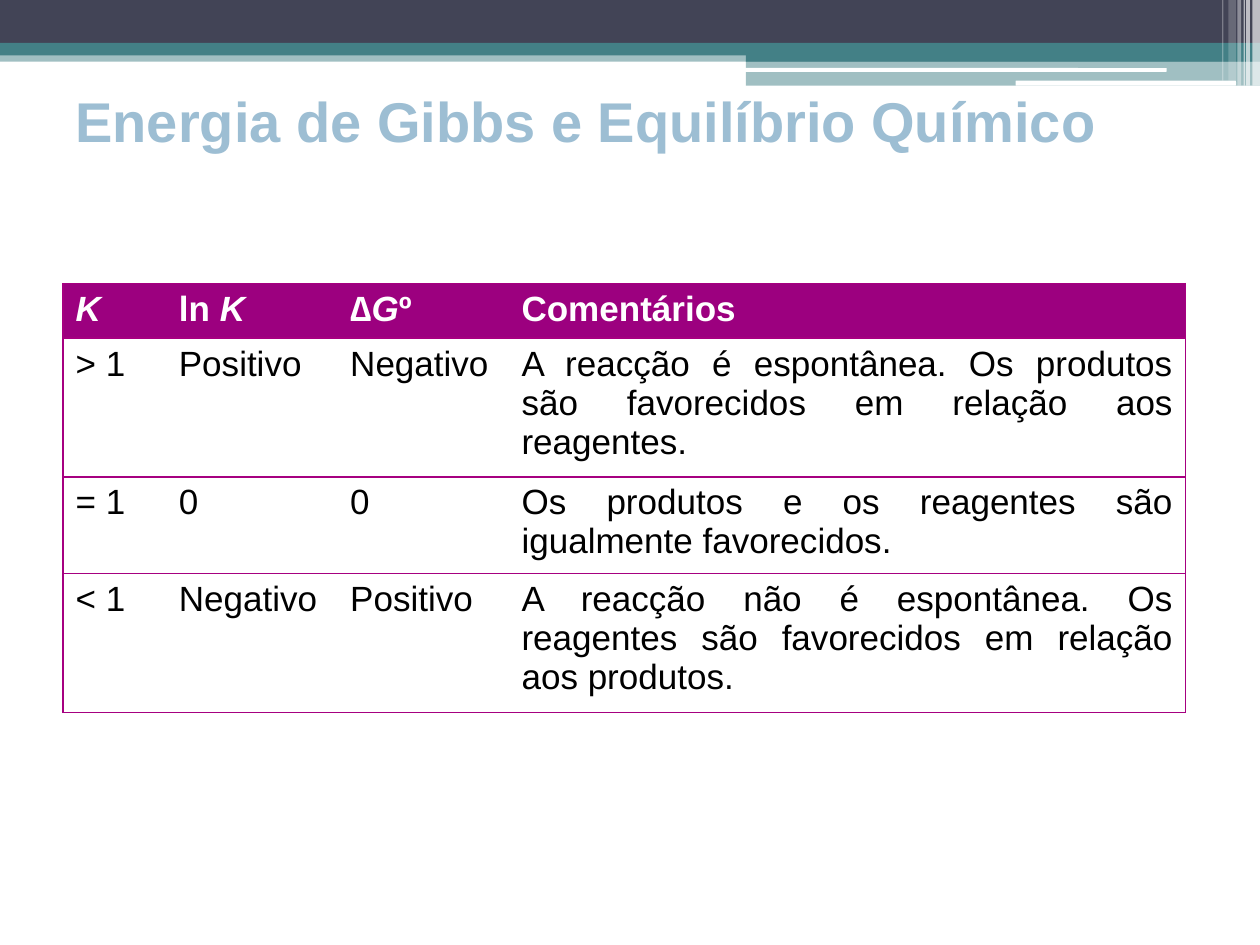
import pptx
import pptx.dml.color
import pptx.enum.shapes
import pptx.enum.text
import pptx.oxml
import pptx.oxml.ns
import pptx.util
from pptx.util import Inches

NAVY, TEAL, WHITE, BLACK = "424456", "438086", "FFFFFF", "000000"
TITLE_BLUE, HEADER_PURPLE, BORDER_PURPLE = "9DBED3", "9C007F", "A60080"
LEFT = pptx.enum.text.PP_ALIGN.LEFT
JUSTIFY = pptx.enum.text.PP_ALIGN.JUSTIFY
RECTANGLE = pptx.enum.shapes.MSO_SHAPE.RECTANGLE
ROUNDED = pptx.enum.shapes.MSO_SHAPE.ROUNDED_RECTANGLE

COLUMN_WIDTHS = (0.82, 1.36, 1.36, 5.37)
ROW_HEIGHTS = (0.41, 1.03, 0.72, 1.03)
# Header cells are lists of (text, italic) runs.
HEADER = (
    [("K", True)],
    [("ln ", False), ("K", True)],
    [("∆", False), ("G", True), ("º", False)],
    [("Comentários", False)],
)
BODY = (
    ("> 1", "Positivo", "Negativo",
     "A reacção é espontânea. Os produtos são favorecidos em relação aos reagentes."),
    ("= 1", "0", "0", "Os produtos e os reagentes são igualmente favorecidos."),
    ("< 1", "Negativo", "Positivo",
     "A reacção não é espontânea. Os reagentes são favorecidos em relação aos produtos."),
)


def rgb(value):
    return pptx.dml.color.RGBColor.from_string(value)


def write_text(frame, runs, size=20, color=BLACK, bold=False, align=LEFT):
    """Fill the frame's first paragraph with a string or (text, italic) runs."""
    if isinstance(runs, str):
        runs = [(runs, False)]
    frame.word_wrap = True
    paragraph = frame.paragraphs[0]
    paragraph.alignment = align
    for text, italic in runs:
        run = paragraph.add_run()
        run.text = text
        run.font.name = "Arial"
        run.font.size = pptx.util.Pt(size)
        run.font.color.rgb = rgb(color)
        run.font.bold = bold
        run.font.italic = italic


def add_bar(slide, box, color, opacity=100, kind=RECTANGLE):
    shape = slide.shapes.add_shape(kind, *map(Inches, box))
    shape.shadow.inherit = False
    shape.line.fill.background()
    shape.fill.solid()
    shape.fill.fore_color.rgb = rgb(color)
    if opacity < 100:
        color_element = shape.fill._xPr.find(".//" + pptx.oxml.ns.qn("a:srgbClr"))
        alpha = pptx.oxml.parse_xml(
            f'<a:alpha {pptx.oxml.ns.nsdecls("a")} val="{opacity * 1000}"/>')
        color_element.append(alpha)


def add_banner(slide, left, top, width):
    right = left + width
    step = left + 5.92
    add_bar(slide, (left, top + 0.4, width, 0.09), TEAL, 50)
    add_bar(slide, (left, top, width, 0.34), NAVY)
    add_bar(slide, (left, top + 0.34, width, 0.1), TEAL)
    add_bar(slide, (step, top + 0.39, right - step, 0.1), TEAL)
    add_bar(slide, (step, top + 0.48, right - step, 0.2), TEAL, 50)
    add_bar(slide, (step - 0.01, top + 0.54, 3.35, 0.03), WHITE, kind=ROUNDED)
    add_bar(slide, (left + 8.06, top + 0.64, 1.75, 0.04), WHITE, kind=ROUNDED)
    # Stripes: distance from the right edge, width, height, opacity.
    for inset, stripe_width, height, opacity in (
            (0.06, 0.06, 0.68, 65), (0.11, 0.03, 0.68, 65), (0.13, 0.01, 0.68, 60),
            (0.18, 0.03, 0.68, 40), (0.25, 0.06, 0.64, 20), (0.3, 0.01, 0.64, 30)):
        add_bar(slide, (right - inset, top, stripe_width, height), WHITE, opacity)


def add_title(slide, left, top, width, height):
    frame = slide.shapes.add_textbox(*map(Inches, (left, top, width, height))).text_frame
    frame.vertical_anchor = pptx.enum.text.MSO_ANCHOR.MIDDLE
    write_text(frame, "Energia de Gibbs e Equilíbrio Químico",
               size=32, color=TITLE_BLUE, bold=True)


def set_borders(cell, visible_sides):
    """Draw the named sides (out of L, R, T, B) and hide the others."""
    properties = cell._tc.get_or_add_tcPr()
    for side in "LRTB":
        fill = (f'<a:solidFill><a:srgbClr val="{BORDER_PURPLE}"/></a:solidFill>'
                if side in visible_sides else "<a:noFill/>")
        properties.append(pptx.oxml.parse_xml(
            f'<a:ln{side} {pptx.oxml.ns.nsdecls("a")} w="12700">{fill}</a:ln{side}>'))


def add_comparison_table(slide, left, top):
    rows = (HEADER,) + BODY
    table = slide.shapes.add_table(
        len(rows), len(COLUMN_WIDTHS), Inches(left), Inches(top),
        Inches(sum(COLUMN_WIDTHS)), Inches(sum(ROW_HEIGHTS))).table
    for column, width in zip(table.columns, COLUMN_WIDTHS):
        column.width = Inches(width)
    last_column = len(COLUMN_WIDTHS) - 1
    for row_index, (row, height) in enumerate(zip(rows, ROW_HEIGHTS)):
        table.rows[row_index].height = Inches(height)
        for column_index, content in enumerate(row):
            cell = table.cell(row_index, column_index)
            set_borders(cell, "TB" + {0: "L", last_column: "R"}.get(column_index, ""))
            if row_index == 0:
                cell.fill.solid()
                cell.fill.fore_color.rgb = rgb(HEADER_PURPLE)
                write_text(cell.text_frame, content, color=WHITE, bold=True)
            else:
                cell.fill.background()
                write_text(cell.text_frame, content, align=JUSTIFY)


def main():
    presentation = pptx.Presentation()
    presentation.slide_width = Inches(10)
    presentation.slide_height = Inches(7.5)
    slide = presentation.slides.add_slide(presentation.slide_layouts[6])
    add_banner(slide, 0, 0, 10)
    add_title(slide, 0.5, 0.33, 8.83, 1.25)
    add_comparison_table(slide, 0.5, 2.25)
    presentation.save("out.pptx")


if __name__ == "__main__":
    main()
